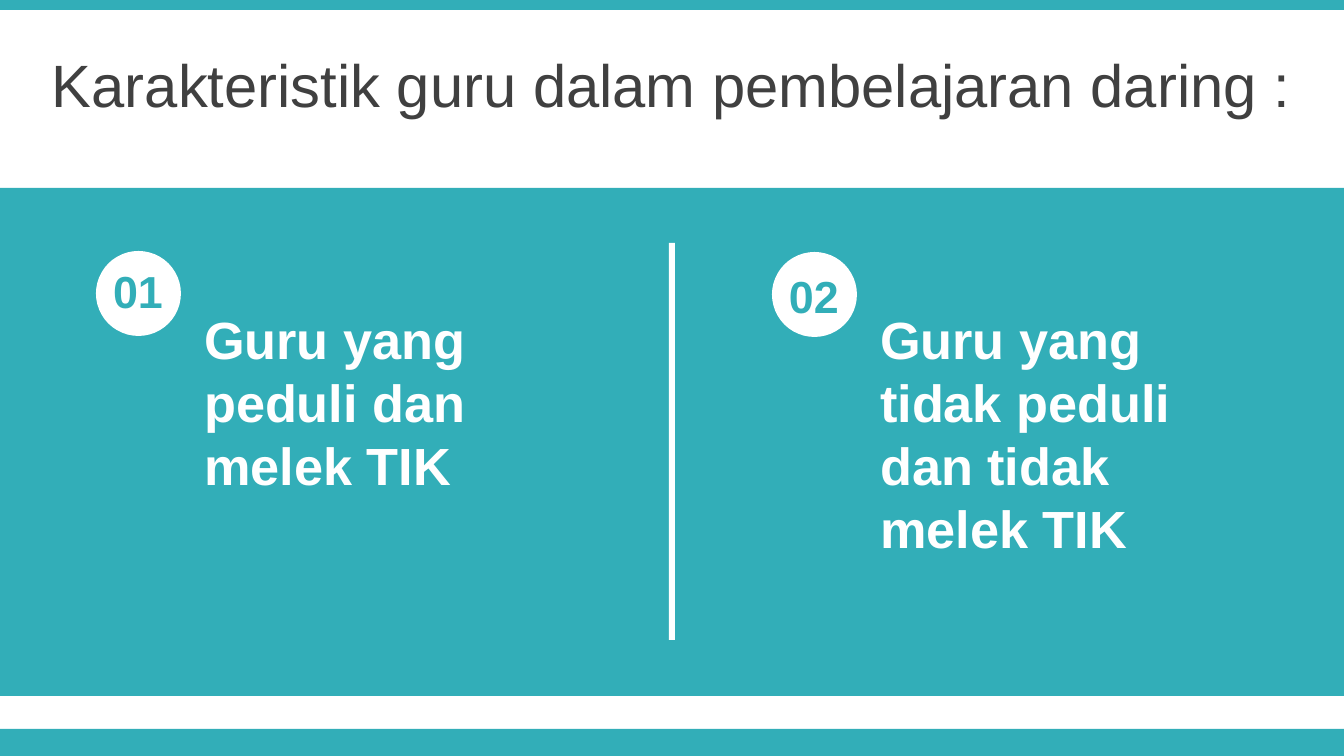
from pptx import Presentation
from pptx.dml.color import RGBColor
from pptx.enum.shapes import MSO_SHAPE
from pptx.enum.text import MSO_ANCHOR, PP_ALIGN
from pptx.util import Emu, Pt

PX = 914400 / 134.4
TEAL, WHITE, GREY = "32AEB8", "FFFFFF", "404040"
WIDTH, HEIGHT = 1344, 756


def px(n):
    """Turn pixels into EMU."""
    return Emu(round(n * PX))


def color(target, value):
    """Give a fill or font colour the hex value."""
    target.rgb = RGBColor.from_string(value)


def add_block(s, box, fill, kind=MSO_SHAPE.RECTANGLE):
    """Add a filled shape without outline or shadow."""
    sp = s.shapes.add_shape(kind, *map(px, box))
    sp.shadow.inherit = False
    sp.fill.solid()
    color(sp.fill.fore_color, fill)
    sp.line.fill.background()


def add_text(s, box, text, fill, font, paragraph=None, frame=None):
    """Add a wrapped text box with the given format values."""
    tf = s.shapes.add_textbox(*map(px, box)).text_frame
    p = tf.paragraphs[0]
    r = p.add_run()
    r.text = text
    color(r.font.color, fill)
    formats = (
        (tf, {"word_wrap": True, **(frame or {})}),
        (p, paragraph or {}),
        (r.font, {"name": "Arial", **font}),
    )
    for target, values in formats:
        for name, value in values.items():
            setattr(target, name, value)


def add_header(s, box):
    """Place the centred heading in its box."""
    add_text(s, box, "Karakteristik guru dalam pembelajaran daring :", GREY,
             {"size": Pt(32)},
             {"alignment": PP_ALIGN.CENTER, "space_before": Pt(6)},
             {"vertical_anchor": MSO_ANCHOR.MIDDLE})


def add_trait(s, box, number, text, circle_top, number_top):
    """Place a numbered circle with its statement to the right."""
    x, y, w, h = box
    add_block(s, (x + 5, y + circle_top, 85, 85), WHITE, MSO_SHAPE.OVAL)
    add_text(s, (x + 100, y + 58, w - 100, h - 58), text, WHITE,
             {"size": Pt(28), "bold": True})
    add_text(s, (x, y + number_top, 94, 67), number, TEAL,
             {"size": Pt(24), "bold": True}, {"alignment": PP_ALIGN.CENTER})


def add_panel(s, box):
    """Place the teal panel with its divider and two traits."""
    x, y, w, h = box
    add_block(s, box, TEAL)
    traits = (
        ("01", "Guru yang peduli dan melek TIK", 8, 14, 261),
        ("02", "Guru yang tidak peduli dan tidak melek TIK", 9, 19, 325),
    )
    for i, (number, text, circle_top, number_top, height) in enumerate(traits):
        add_trait(s, (x + 91 + 676 * i, y + 55, 491, height),
                  number, text, circle_top, number_top)
    add_block(s, (x + w // 2 - 3, y + 55, 6, h - 111), WHITE)


def main():
    """Build and save the slide."""
    prs = Presentation()
    prs.slide_width, prs.slide_height = px(WIDTH), px(HEIGHT)
    s = prs.slides.add_slide(prs.slide_layouts[6])
    for top, height in ((729, 27), (0, 10)):
        add_block(s, (0, top, WIDTH, height), TEAL)
    add_header(s, (0, 42, WIDTH, 84))
    add_panel(s, (0, 188, WIDTH, 508))
    prs.save("out.pptx")


if __name__ == "__main__":
    main()
